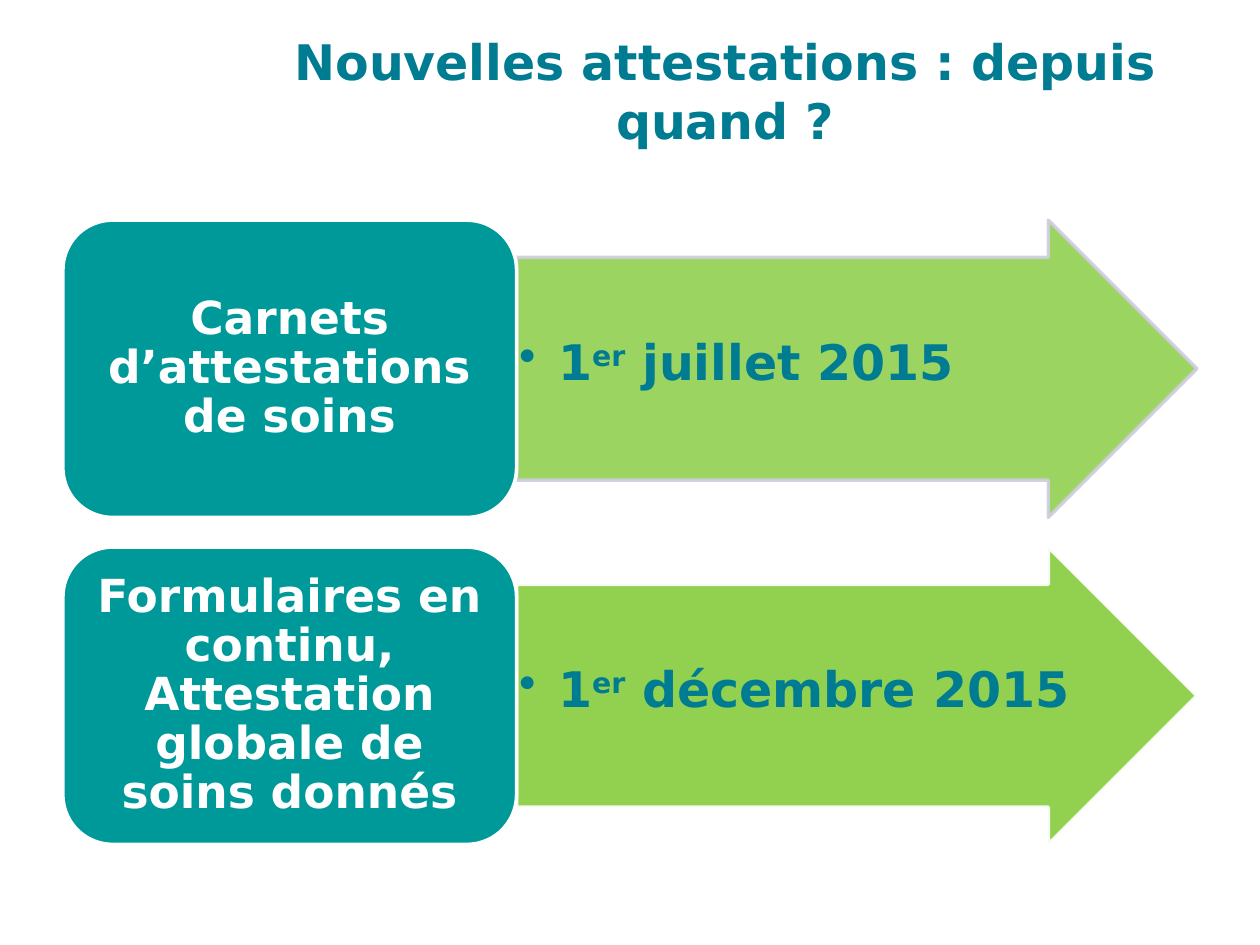
from dataclasses import dataclass

from lxml.etree import SubElement
from pptx import Presentation
from pptx.dml.color import RGBColor
from pptx.enum.shapes import MSO_SHAPE
from pptx.enum.text import MSO_ANCHOR, MSO_AUTO_SIZE, PP_ALIGN
from pptx.oxml.ns import qn
from pptx.util import Inches, Pt

WIDTH, HEIGHT = Inches(10), Inches(7.5)
LEFT, SPLIT, RIGHT = 0.05, 0.41, 0.95
TOP, ROW_HEIGHT, ROW_PITCH = 0.233, 0.3145, 0.346
TITLE_ONLY = 5

ROWS = [
    ("Carnets d’attestations de soins", " juillet 2015", "CECEDE", 90),
    ("Formulaires en continu, Attestation globale de soins donnés",
     " décembre 2015", "FFFFFF", 100),
]


def paint(colour_format, colour, opacity=100):
    colour_format.rgb = RGBColor.from_string(colour)
    return opacity


def set_fill(fill, colour, opacity=100):
    fill.solid()
    paint(fill.fore_color, colour)
    if opacity < 100:
        solid = fill._xPr.find(qn("a:solidFill"))
        SubElement(solid[0], qn("a:alpha")).set("val", str(opacity * 1000))


def add_text(para, text, size, colour, font="DejaVu Sans", bold=True, raised=0):
    span = para.add_run()
    span.text = text
    span.font.name = font
    span.font.size = Pt(size)
    span.font.bold = bold
    set_fill(span.font.fill, colour)
    if raised:
        span.font._element.set("baseline", str(raised * 1000))


def set_frame(frame, insets, anchor=MSO_ANCHOR.MIDDLE):
    frame.word_wrap = True
    frame.auto_size = MSO_AUTO_SIZE.NONE
    frame.vertical_anchor = anchor
    (frame.margin_left, frame.margin_top,
     frame.margin_right, frame.margin_bottom) = map(Inches, insets)
    return frame.paragraphs[0]


@dataclass
class Timeline:
    page: object
    ink: str = "007C92"
    label_fill: str = "009999"
    arrow_fill: str = "92D050"
    light: str = "FFFFFF"

    def title(self, text):
        box = self.page.shapes.title
        box.left, box.width = int(0.201 * WIDTH), int(0.749 * WIDTH)
        box.top, box.height = int(0.059 * HEIGHT), int(0.113 * HEIGHT)
        para = set_frame(box.text_frame, (0.1, 0.05, 0.1, 0.35))
        para.alignment = PP_ALIGN.CENTER
        add_text(para, text, 28, self.ink)

    def block(self, kind, row, left, right, fill, outline, opacity=100, line_opacity=100):
        shape = self.page.shapes.add_shape(
            kind, int(left * WIDTH), int((TOP + row * ROW_PITCH) * HEIGHT),
            int((right - left) * WIDTH), int(ROW_HEIGHT * HEIGHT))
        shape.shadow.inherit = False
        set_fill(shape.fill, fill, opacity)
        shape.line.width = Pt(2)
        set_fill(shape.line.fill, outline, line_opacity)
        return shape

    def arrow(self, row, date, outline, opacity):
        shape = self.block(MSO_SHAPE.RIGHT_ARROW, row, SPLIT, RIGHT,
                           self.arrow_fill, outline, opacity, 90)
        shape.adjustments[0] = 0.75
        para = set_frame(shape.text_frame, (0.02, 0.02, 0.02, 0.08))
        para.alignment = PP_ALIGN.LEFT
        para.level = 1
        para.line_spacing = 0.9
        properties = para._p.get_or_add_pPr()
        properties.set("marL", str(Inches(0.31)))
        properties.set("indent", str(-Inches(0.31)))
        SubElement(properties, qn("a:buChar")).set("char", "•")
        add_text(para, "1", 28, self.ink)
        add_text(para, "er", 28, self.ink, raised=30)
        add_text(para, date, 28, self.ink)

    def label(self, row, text):
        shape = self.block(MSO_SHAPE.ROUNDED_RECTANGLE, row, LEFT, SPLIT,
                           self.label_fill, self.light)
        para = set_frame(shape.text_frame, (0.11, 0.05, 0.11, 0.05))
        para.alignment = PP_ALIGN.CENTER
        para.line_spacing = 0.9
        add_text(para, text, 26, self.light)


def main():
    deck = Presentation()
    deck.slide_width, deck.slide_height = WIDTH, HEIGHT
    timeline = Timeline(deck.slides.add_slide(deck.slide_layouts[TITLE_ONLY]))
    timeline.title("Nouvelles attestations : depuis quand ?")
    for row, (label, date, outline, opacity) in enumerate(ROWS):
        timeline.arrow(row, date, outline, opacity)
        timeline.label(row, label)
    deck.save("out.pptx")


if __name__ == "__main__":
    main()
